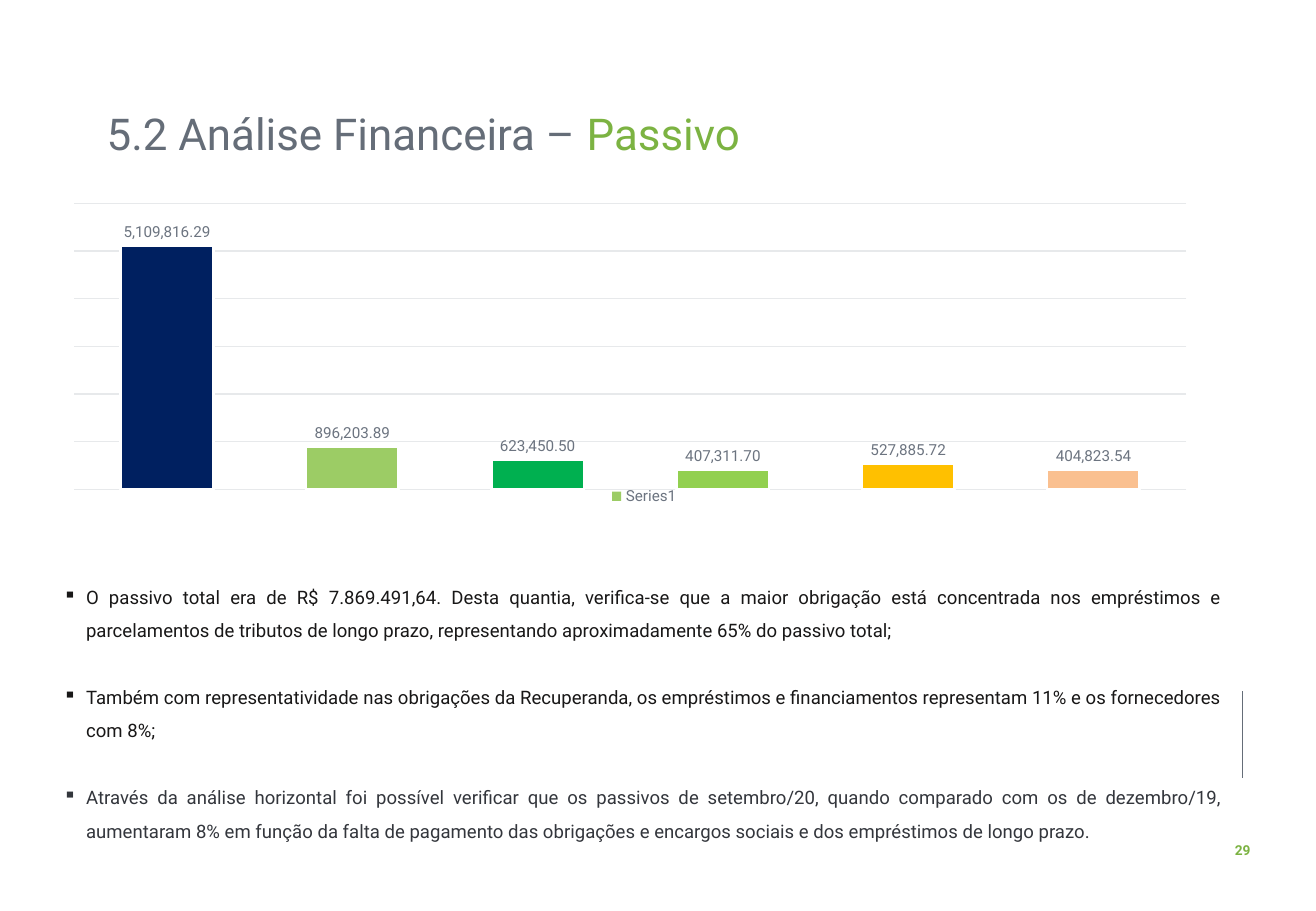
import lxml.etree
import pptx
import pptx.chart.data
import pptx.dml.color
import pptx.enum.chart
import pptx.enum.shapes
import pptx.enum.text
import pptx.oxml
import pptx.oxml.ns
import pptx.util

Cm = pptx.util.Cm
Pt = pptx.util.Pt
RGBColor = pptx.dml.color.RGBColor
PP_ALIGN = pptx.enum.text.PP_ALIGN
MSO_ANCHOR = pptx.enum.text.MSO_ANCHOR
qn = pptx.oxml.ns.qn

FONT = "Roboto"
SLATE = RGBColor(0x65, 0x6D, 0x78)
GREEN = RGBColor(0x7C, 0xB3, 0x42)
INK = RGBColor(0x18, 0x17, 0x17)
CHARCOAL = RGBColor(0x33, 0x36, 0x3C)
CHART_GRAY = RGBColor(0x6C, 0x74, 0x80)
GRID_GRAY = RGBColor(0xE7, 0xE9, 0xEB)
WHITE = RGBColor(0xFF, 0xFF, 0xFF)
LIGHT_GREEN = RGBColor(0x9C, 0xCC, 0x65)

LIABILITIES = [
    (5109816.29, RGBColor(0x00, 0x20, 0x60)),
    (896203.89, LIGHT_GREEN),
    (623450.50, RGBColor(0x00, 0xB0, 0x50)),
    (407311.70, RGBColor(0x92, 0xD0, 0x50)),
    (527885.72, RGBColor(0xFF, 0xC0, 0x00)),
    (404823.54, RGBColor(0xFA, 0xC0, 0x90)),
]

FINDINGS = [
    ("O passivo total era de R$ 7.869.491,64. Desta quantia, verifica-se que a maior "
     "obrigação está concentrada nos empréstimos e parcelamentos de tributos de longo "
     "prazo, representando aproximadamente 65% do passivo total;", INK),
    ("Também com representatividade nas obrigações da Recuperanda, os empréstimos e "
     "financiamentos representam 11% e os fornecedores com 8%;", INK),
    ("Através da análise horizontal foi possível verificar que os passivos de "
     "setembro/20, quando comparado com os de dezembro/19, aumentaram 8% em função da "
     "falta de pagamento das obrigações e encargos sociais e dos empréstimos de longo "
     "prazo.", CHARCOAL),
]


def style_font(font, size, color, bold=False):
    font.name = FONT
    font.size = Pt(size)
    font.bold = bold
    font.color.rgb = color


def add_text(slide, box, paragraphs, *, size, bold=False, align=PP_ALIGN.LEFT,
             anchor=MSO_ANCHOR.TOP, wrap=True, line_spacing=1.0, gap=0, bullet=None):
    frame = slide.shapes.add_textbox(*map(Cm, box)).text_frame
    frame.word_wrap = wrap
    frame.vertical_anchor = anchor
    for index, pieces in enumerate(paragraphs):
        paragraph = frame.add_paragraph() if index else frame.paragraphs[0]
        paragraph.alignment = align
        paragraph.line_spacing = line_spacing
        if index:
            paragraph.space_before = Pt(gap)
        if bullet:
            properties = paragraph._p.get_or_add_pPr()
            properties.set("marL", str(Cm(0.48)))
            properties.set("indent", str(-Cm(0.48)))
            lxml.etree.SubElement(properties, qn("a:buChar")).set("char", bullet)
        for text, color in pieces:
            run = paragraph.add_run()
            run.text = text
            style_font(run.font, size, color, bold)


def make_layout(target=None, **fractions):
    layout = pptx.oxml.parse_xml(
        f'<c:layout {pptx.oxml.ns.nsdecls("c")}><c:manualLayout/></c:layout>')
    settings = {"xMode": "edge", "yMode": "edge", **fractions}
    if target:
        settings = {"layoutTarget": target, **settings}
    for key, value in settings.items():
        lxml.etree.SubElement(layout[0], qn(f"c:{key}")).set("val", str(value))
    return layout


def add_liabilities_chart(slide, box):
    data = pptx.chart.data.CategoryChartData(number_format="#,##0.00")
    data.categories = [str(n + 1) for n in range(len(LIABILITIES))]
    data.add_series("Series1", [value for value, _ in LIABILITIES])
    chart = slide.shapes.add_chart(
        pptx.enum.chart.XL_CHART_TYPE.COLUMN_CLUSTERED, *map(Cm, box), data).chart
    style_font(chart.font, 10, CHART_GRAY)
    chart.has_title = False

    chart.category_axis.visible = False
    amounts = chart.value_axis
    amounts.visible = False
    amounts.minimum_scale, amounts.maximum_scale = 0, 6000000
    amounts.major_unit = 1000000
    amounts.has_major_gridlines = True
    amounts.major_gridlines.format.line.color.rgb = GRID_GRAY
    amounts.major_gridlines.format.line.width = Pt(0.75)

    columns = chart.plots[0]
    columns.gap_width = 100
    columns.vary_by_categories = False
    liabilities = columns.series[0]
    liabilities.format.fill.solid()
    liabilities.format.fill.fore_color.rgb = LIGHT_GREEN
    for index, (_, color) in enumerate(LIABILITIES):
        column = liabilities.points[index].format
        column.fill.solid()
        column.fill.fore_color.rgb = color
        column.line.color.rgb = WHITE
        column.line.width = Pt(1.5)

    labels = liabilities.data_labels
    labels.show_value = True
    labels.number_format = "#,##0.00"
    labels.number_format_is_linked = False
    labels.position = pptx.enum.chart.XL_LABEL_POSITION.OUTSIDE_END
    style_font(labels.font, 9, CHART_GRAY)

    chart.has_legend = True
    legend = chart.legend
    legend.position = pptx.enum.chart.XL_LEGEND_POSITION.BOTTOM
    legend.include_in_layout = False
    style_font(legend.font, 9, CHART_GRAY)

    plot_area = chart._chartSpace.chart.plotArea
    for layout in plot_area.findall(qn("c:layout")):
        plot_area.remove(layout)
    plot_area.insert(0, make_layout("inner", x=0.02, y=0.02, w=0.96, h=0.85))
    for layout in legend._element.findall(qn("c:layout")):
        legend._element.remove(layout)
    legend._element.find(qn("c:legendPos")).addnext(make_layout(x=0.48, y=0.85))


def add_rule(slide, x, top, bottom):
    rule = slide.shapes.add_connector(
        pptx.enum.shapes.MSO_CONNECTOR.STRAIGHT, Cm(x), Cm(top), Cm(x), Cm(bottom))
    rule.line.color.rgb = SLATE
    rule.line.width = Pt(0.5)
    lxml.etree.SubElement(rule._element.spPr, qn("a:effectLst"))


def main():
    deck = pptx.Presentation()
    deck.slide_width, deck.slide_height = Cm(27.51), Cm(19.05)
    slide = deck.slides.add_slide(deck.slide_layouts[6])
    add_rule(slide, 25.98, 14.45, 16.26)
    add_text(slide, (25.55, 17.48, 0.86, 0.61), [[("29", GREEN)]], size=8.1,
             bold=True, align=PP_ALIGN.CENTER, wrap=False)
    add_text(slide, (1.98, 2.18, 20.78, 1.35),
             [[("5.2 Análise Financeira – ", SLATE), ("Passivo", GREEN)]],
             size=26, anchor=MSO_ANCHOR.MIDDLE, line_spacing=0.9)
    add_text(slide, (1.07, 11.89, 24.74, 5.13), [[finding] for finding in FINDINGS],
             size=11, align=PP_ALIGN.JUSTIFY, line_spacing=1.5, gap=19.8, bullet="▪")
    add_liabilities_chart(slide, (1.07, 4.11, 24.21, 7.04))
    deck.save("out.pptx")


if __name__ == "__main__":
    main()
